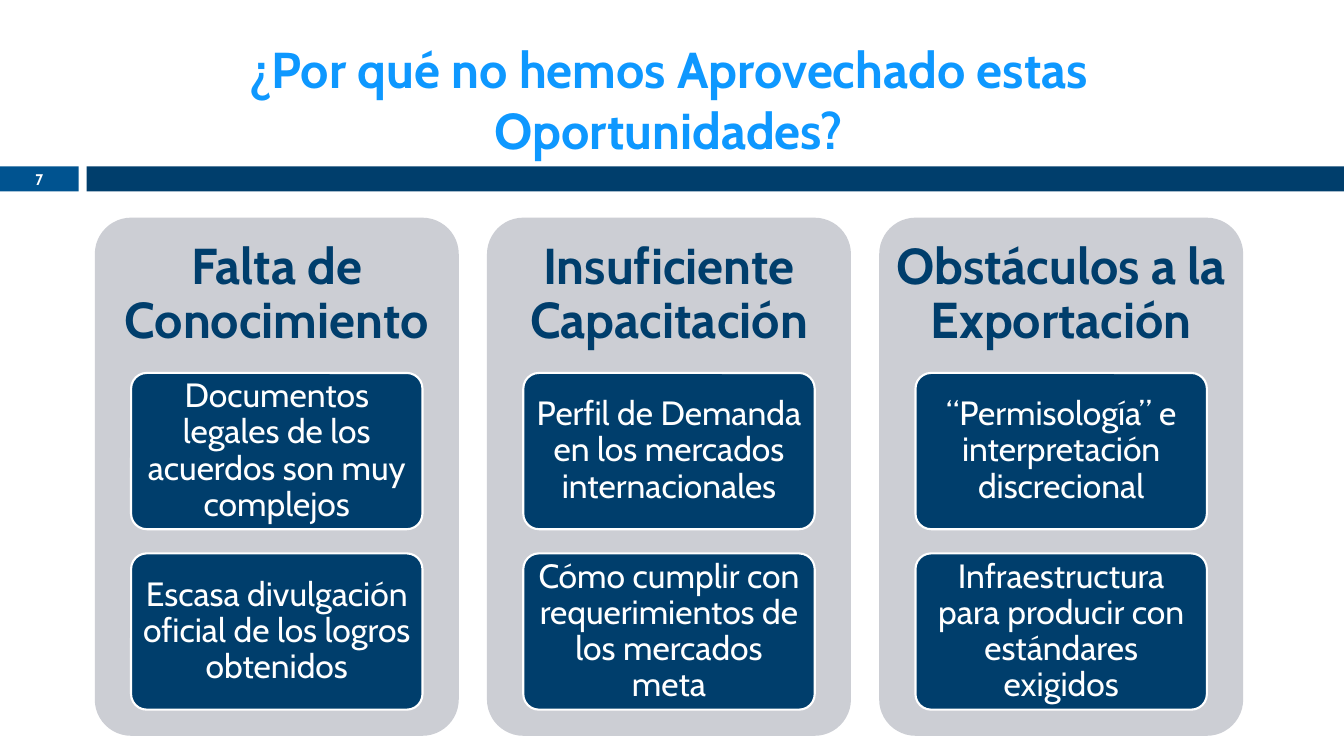
import pptx
import pptx.util
import pptx.dml.color
import pptx.enum.shapes
import pptx.enum.text

Inches = pptx.util.Inches
SHAPES = pptx.enum.shapes.MSO_SHAPE
ANCHOR = pptx.enum.text.MSO_ANCHOR

COLORS = {
    "title": "0E98FF",
    "navy": "003E6C",
    "blue": "005390",
    "panel": "CCCED4",
    "white": "FFFFFF",
}

COLUMNS = [
    ("Falta de Conocimiento", [
        "Documentos legales de los acuerdos son muy complejos",
        "Escasa divulgación oficial de los logros obtenidos",
    ]),
    ("Insuficiente Capacitación", [
        "Perfil de Demanda en los mercados internacionales",
        "Cómo cumplir con requerimientos de los mercados meta",
    ]),
    ("Obstáculos a la Exportación", [
        "“Permisología” e interpretación discrecional",
        "Infraestructura para producir con estándares exigidos",
    ]),
]


class SlideBuilder:
    font_name = "Cabin"

    def __init__(self, presentation):
        self.slide = presentation.slides.add_slide(presentation.slide_layouts[5])

    def color(self, name):
        return pptx.dml.color.RGBColor.from_string(COLORS[name])

    def set_text(self, shape, text, size, color, bold=False, anchor=ANCHOR.MIDDLE,
                 margins=(0.1, 0.05), line_spacing=1.0):
        frame = shape.text_frame
        frame.word_wrap = True
        frame.auto_size = pptx.enum.text.MSO_AUTO_SIZE.NONE
        frame.vertical_anchor = anchor
        frame.margin_left = frame.margin_right = Inches(margins[0])
        frame.margin_top = frame.margin_bottom = Inches(margins[1])
        paragraph = frame.paragraphs[0]
        paragraph.alignment = pptx.enum.text.PP_ALIGN.CENTER
        paragraph.line_spacing = line_spacing
        run = paragraph.add_run()
        run.text = text
        run.font.name = self.font_name
        run.font.size = pptx.util.Pt(size)
        run.font.bold = bold
        run.font.color.rgb = self.color(color)

    def title(self, text, left, top, width, height):
        shape = self.slide.shapes.title
        shape.left, shape.top = Inches(left), Inches(top)
        shape.width, shape.height = Inches(width), Inches(height)
        self.set_text(shape, text, 36, "title", bold=True, anchor=ANCHOR.BOTTOM)

    def box(self, kind, left, top, width, height, fill, line=None):
        shape = self.slide.shapes.add_shape(
            kind, Inches(left), Inches(top), Inches(width), Inches(height))
        shape.shadow.inherit = False
        shape.fill.solid()
        shape.fill.fore_color.rgb = self.color(fill)
        if line:
            shape.line.color.rgb = self.color(line)
            shape.line.width = pptx.util.Pt(1.5)
        else:
            shape.line.fill.background()
        return shape

    def rounded(self, left, top, width, height, fill, line=None):
        shape = self.box(SHAPES.ROUNDED_RECTANGLE, left, top, width, height, fill, line)
        shape.adjustments[0] = 0.1
        return shape

    def label(self, text, left, top, width, height, size, color, **style):
        shape = self.slide.shapes.add_textbox(
            Inches(left), Inches(top), Inches(width), Inches(height))
        self.set_text(shape, text, size, color, bold=True, **style)

    def column(self, left, heading, cards):
        top, width = 2.16, 3.61
        self.rounded(left, top, width, 5.14, "panel")
        self.label(heading, left, top, width, 1.54, 36, "navy",
                   margins=(0.15, 0.15), line_spacing=0.9)
        for index, text in enumerate(cards):
            card = self.rounded(left + 0.36, 3.7 + index * 1.79, 2.89, 1.55,
                                "navy", "white")
            self.set_text(card, text, 24, "white", margins=(0.07, 0.05),
                          line_spacing=0.9)


def main():
    presentation = pptx.Presentation()
    presentation.slide_width = Inches(13.33)
    presentation.slide_height = Inches(7.5)
    builder = SlideBuilder(presentation)
    builder.box(SHAPES.RECTANGLE, 0, 1.65, 0.78, 0.25, "blue")
    builder.box(SHAPES.RECTANGLE, 0.86, 1.65, 12.47, 0.25, "navy")
    builder.title("¿Por qué no hemos Aprovechado estas Oportunidades?",
                  0.69, 0.93, 11.89, 0.7)
    builder.label("7", 0, 1.64, 0.78, 0.27, 11, "white")
    for index, (heading, cards) in enumerate(COLUMNS):
        builder.column(0.94 + index * 3.89, heading, cards)
    presentation.save("out.pptx")


if __name__ == "__main__":
    main()
